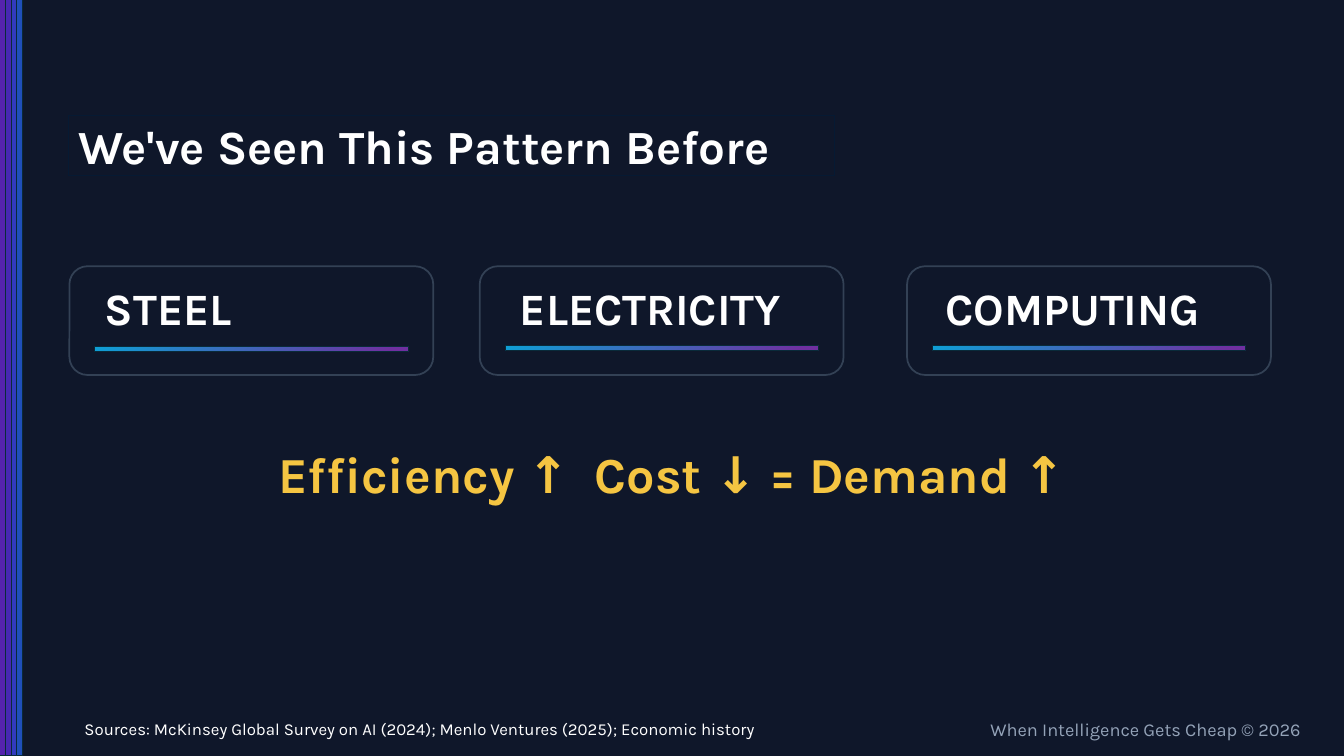
from pptx import Presentation
from pptx.dml.color import RGBColor
from pptx.enum.shapes import MSO_SHAPE
from pptx.enum.text import MSO_ANCHOR, MSO_AUTO_SIZE, PP_ALIGN
from pptx.oxml import parse_xml
from pptx.oxml.ns import nsdecls, qn
from pptx.util import Cm, Pt
from lxml.etree import SubElement

NAVY = RGBColor(0x0F, 0x17, 0x2A)
WHITE = RGBColor(0xFF, 0xFF, 0xFF)
GOLD = RGBColor(0xF5, 0xC5, 0x42)
GRAY = RGBColor(0x94, 0xA3, 0xB8)
SLATE = RGBColor(0x33, 0x41, 0x55)
INK = RGBColor(0x06, 0x1A, 0x33)
TEAL = RGBColor(0x09, 0x2A, 0x39)
PURPLE = RGBColor(0x70, 0x30, 0xA0)
CYAN = RGBColor(0x0F, 0x9E, 0xD5)
BANDS = [
    RGBColor(0x6D, 0x28, 0xD9),
    RGBColor(0x5B, 0x2F, 0xE0),
    RGBColor(0x3F, 0x48, 0xF0),
    RGBColor(0x25, 0x63, 0xEB),
]
CARDS = [
    ("STEEL", 1.75, 0.64, 8.74),
    ("ELECTRICITY", 12.09, 0.76, 8.71),
    ("COMPUTING", 22.86, 0.71, 8.71),
]


class Deck:
    font = "Karla"

    def __init__(self, show):
        self.slide = show.slides.add_slide(show.slide_layouts[6])
        back = self.slide.background.fill
        back.solid()
        back.fore_color.rgb = NAVY

    def shape(self, kind, box, line, width):
        item = self.slide.shapes.add_shape(kind, *map(Cm, box))
        item.shadow.inherit = False
        item.fill.background()
        item.line.color.rgb = line
        item.line.width = Pt(width)
        return item

    def band(self, box, color):
        item = self.shape(MSO_SHAPE.RECTANGLE, box, TEAL, 0)
        item.fill.solid()
        item.fill.fore_color.rgb = color
        tint = item._element.spPr.find(qn("a:solidFill"))[0]
        SubElement(tint, qn("a:alpha"), val="75000")

    def bar(self, box):
        item = self.shape(MSO_SHAPE.RECTANGLE, box, TEAL, 0)
        item.fill.gradient()
        for stop, color, place in zip(item.fill.gradient_stops, (PURPLE, CYAN), (0.05, 1)):
            stop.color.rgb = color
            stop.position = place
        grad = item._element.spPr.find(qn("a:gradFill"))
        grad.replace(grad.find(qn("a:lin")), parse_xml(
            f'<a:path {nsdecls("a")} path="circle"><a:fillToRect l="100000" t="100000"/></a:path>'))

    def words(self, item, parts, size, color, bold=False, align=PP_ALIGN.LEFT, gap=0):
        frame = item.text_frame
        frame.word_wrap = True
        para = frame.paragraphs[0]
        para.alignment = align
        para.font.name = self.font
        para.font.size = Pt(size)
        para.font.bold = bold
        para.font.color.rgb = color
        for index, part in enumerate(parts):
            if index:
                space = para.add_run()
                space.text = " "
                space.font._element.set("spc", str(gap * 100))
            para.add_run().text = part
        return frame

    def title(self, box, text):
        item = self.shape(MSO_SHAPE.RECTANGLE, box, INK, 0.75)
        frame = self.words(item, [text], 34, WHITE, True)
        frame.vertical_anchor = MSO_ANCHOR.MIDDLE

    def text(self, box, parts, size, color, anchor=MSO_ANCHOR.TOP, **style):
        item = self.slide.shapes.add_textbox(*map(Cm, box))
        frame = self.words(item, parts, size, color, **style)
        frame.vertical_anchor = anchor
        frame.auto_size = MSO_AUTO_SIZE.SHAPE_TO_FIT_TEXT

    def card(self, name, left, inset, base):
        self.shape(MSO_SHAPE.ROUNDED_RECTANGLE, (left, 6.71, 9.17, 2.74), SLATE, 1.25)
        self.text((left + inset, 6.96, 7.9, 1.63), [name], 32, WHITE, bold=True)
        self.bar((left + 0.64, base, 7.9, 0.13))


def main():
    show = Presentation()
    show.slide_width = Cm(33.87)
    show.slide_height = Cm(19.05)
    deck = Deck(show)
    for index, color in reversed(list(enumerate(BANDS))):
        deck.band((index * 0.14, 0, 0.14, 19.05), color)
    deck.title((1.73, 2.9, 19.3, 1.52), "We've Seen This Pattern Before")
    for card in CARDS:
        deck.card(*card)
    deck.text((6.76, 11.02, 20.35, 1.8), ["Efficiency ↑", "Cost ↓ = Demand ↑"],
              36, GOLD, MSO_ANCHOR.MIDDLE, bold=True, gap=9)
    deck.text((1.88, 17.98, 29.64, 0.76),
              ["Sources: McKinsey Global Survey on AI (2024); Menlo Ventures (2025); Economic history"],
              12, WHITE)
    deck.text((24.03, 17.98, 8.99, 0.81), ["When Intelligence Gets Cheap © 2026"],
              13, GRAY, align=PP_ALIGN.RIGHT)
    show.save("out.pptx")


if __name__ == "__main__":
    main()
